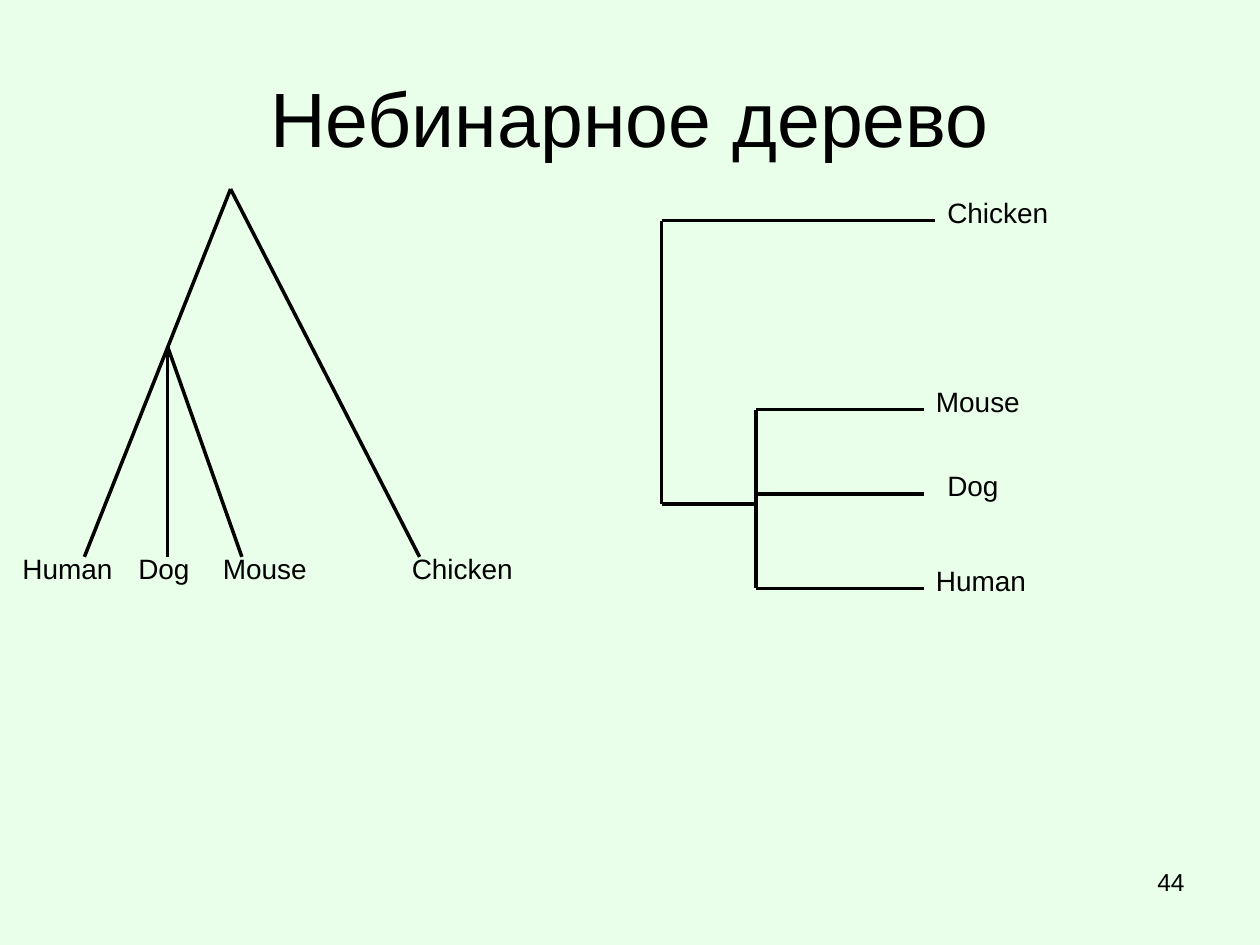
from dataclasses import dataclass

from lxml.etree import SubElement
from pptx import Presentation
from pptx.dml.color import RGBColor
from pptx.enum.shapes import MSO_CONNECTOR as Connector
from pptx.enum.text import MSO_ANCHOR as Anchor, PP_ALIGN as Align
from pptx.oxml.ns import qn
from pptx.util import Inches, Pt


@dataclass(frozen=True)
class Theme:
    background: RGBColor = RGBColor(0xE9, 0xFF, 0xE9)
    ink: RGBColor = RGBColor(0, 0, 0)
    font: str = "Arial"
    title: int = 44
    label: int = 16
    number: int = 14
    line: int = 2


THEME = Theme()
TITLE = "Небинарное дерево"
PAGE_NUMBER = "44"
LABEL_WIDTHS = {"Human": 0.92, "Dog": 0.67, "Mouse": 1.25, "Chicken": 1.67}
LABEL_HEIGHT = 0.37

ROOT = (1.83, 1.5)
NODE = (1.33, 2.75)
LEAF_Y = 4.42
SLANTED_LABEL_Y = 4.33
SLANTED_LEAVES = [
    ("Human", ROOT, 0.67, 0.08),
    ("Dog", NODE, 1.33, 1),
    ("Mouse", NODE, 1.92, 1.67),
    ("Chicken", ROOT, 3.33, 3.17),
]

ROOT_X, NODE_X, NODE_Y = 5.25, 6, 4
LABEL_RISE = 0.25
SQUARE_LEAVES = [
    ("Chicken", ROOT_X, 7.42, 1.75, 7.42),
    ("Mouse", NODE_X, 7.33, 3.25, 7.33),
    ("Dog", NODE_X, 7.33, 3.92, 7.42),
    ("Human", NODE_X, 7.33, 4.67, 7.33),
]


def add_text(page, text, left, top, width, height, size=THEME.label,
             align=Align.LEFT, anchor=Anchor.TOP):
    box = page.shapes.add_textbox(*map(Inches, (left, top, width, height)))
    frame = box.text_frame
    frame.word_wrap = True
    frame.vertical_anchor = anchor
    para = frame.paragraphs[0]
    para.alignment = align
    span = para.add_run()
    span.text = text
    span.font.name = THEME.font
    span.font.size = Pt(size)
    span.font.color.rgb = THEME.ink


def add_label(page, name, left, top):
    add_text(page, name, left, top, LABEL_WIDTHS[name], LABEL_HEIGHT)


def add_branch(page, start, end):
    branch = page.shapes.add_connector(
        Connector.STRAIGHT, *map(Inches, (*start, *end)))
    branch.line.color.rgb = THEME.ink
    branch.line.width = Pt(THEME.line)
    SubElement(branch._element.spPr, qn("a:effectLst"))


def draw_slanted_tree(page):
    for name, parent, leaf_x, label_x in SLANTED_LEAVES:
        add_branch(page, parent, (leaf_x, LEAF_Y))
        add_label(page, name, label_x, SLANTED_LABEL_Y)


def draw_square_tree(page):
    heights = [y for _, start, _, y, _ in SQUARE_LEAVES if start == NODE_X]
    add_branch(page, (ROOT_X, SQUARE_LEAVES[0][3]), (ROOT_X, NODE_Y))
    add_branch(page, (ROOT_X, NODE_Y), (NODE_X, NODE_Y))
    add_branch(page, (NODE_X, min(heights)), (NODE_X, max(heights)))
    for name, start, end, y, label_x in SQUARE_LEAVES:
        add_branch(page, (start, y), (end, y))
        add_label(page, name, label_x, y - LABEL_RISE)


def main():
    deck = Presentation()
    deck.slide_width, deck.slide_height = Inches(10), Inches(7.5)
    page = deck.slides.add_slide(deck.slide_layouts[6])
    page.background.fill.solid()
    page.background.fill.fore_color.rgb = THEME.background
    add_text(page, TITLE, 0.5, 0.3, 9, 1.25, size=THEME.title,
             align=Align.CENTER, anchor=Anchor.MIDDLE)
    draw_slanted_tree(page)
    draw_square_tree(page)
    add_text(page, PAGE_NUMBER, 7.17, 6.83, 2.33, 0.52, size=THEME.number,
             align=Align.RIGHT)
    deck.save("out.pptx")


if __name__ == "__main__":
    main()
